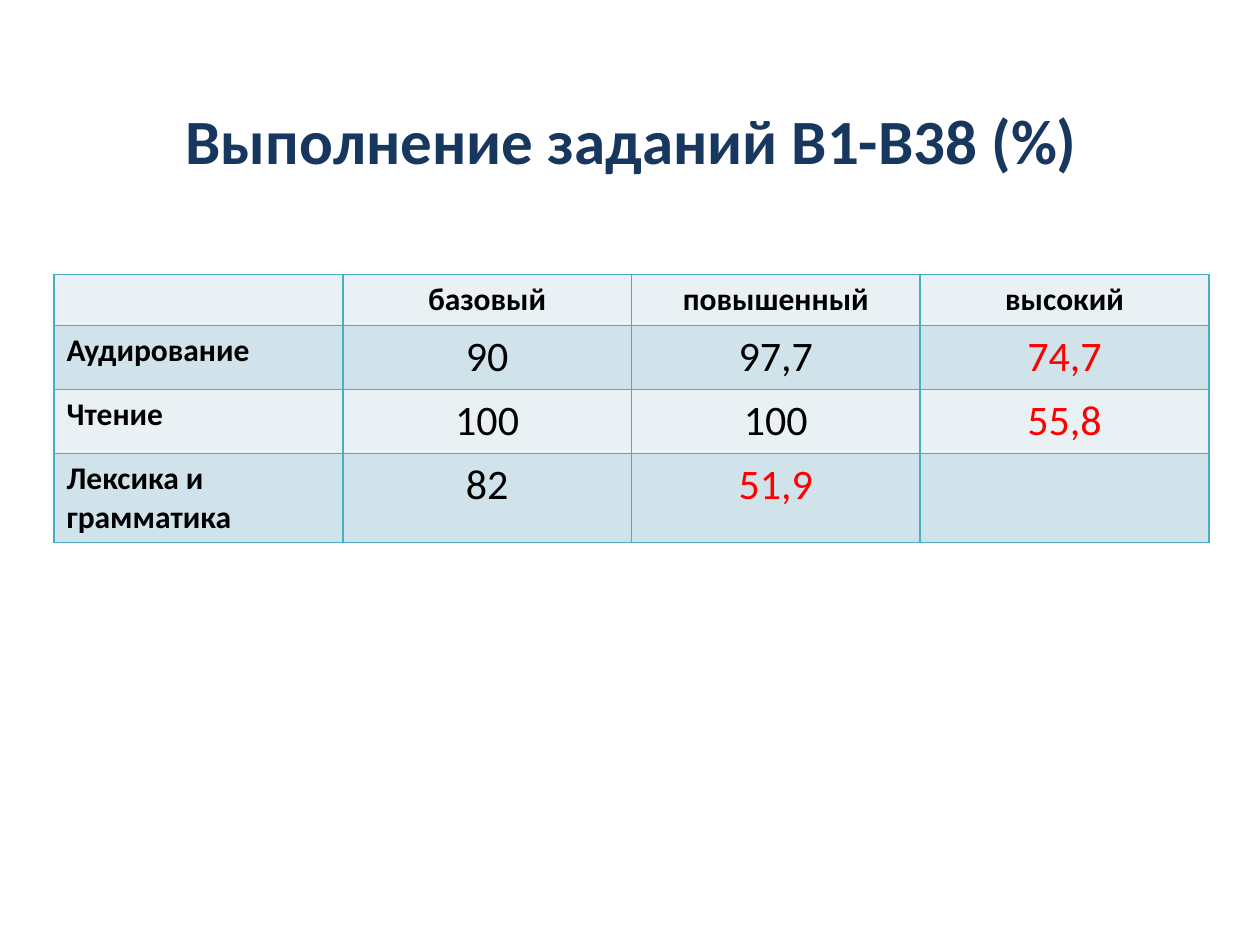
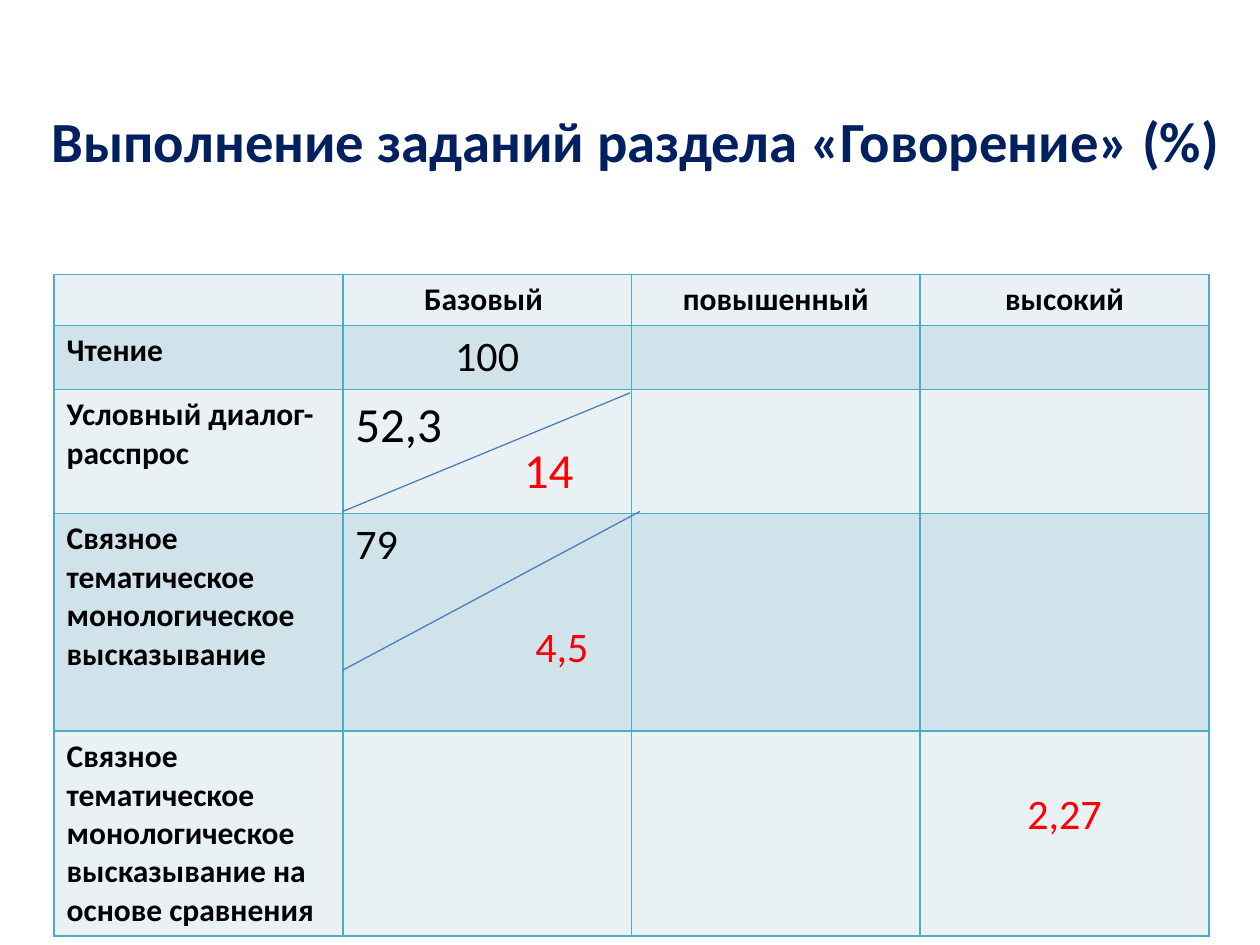
from dataclasses import dataclass

from lxml.etree import SubElement
from pptx import Presentation
from pptx.dml.color import RGBColor
from pptx.enum.shapes import MSO_CONNECTOR
from pptx.enum.text import MSO_ANCHOR, PP_ALIGN
from pptx.oxml import parse_xml
from pptx.oxml.ns import nsdecls, qn
from pptx.util import Cm, Pt

FONT = "Calibri"
COLORS = {
    "title": "17375E",
    "speaking_title": "002060",
    "text": "000000",
    "low": "FF0000",
    "border": "4BACC6",
    "band_light": "E9F1F5",
    "band_dark": "D0E3EA",
    "diagonal": "4B7EBC",
}
BANDS = ("band_light", "band_dark")


@dataclass
class Text:
    text: str
    size: float = 24
    color: str = "text"
    bold: bool = False
    align: PP_ALIGN = PP_ALIGN.CENTER
    indent: float = 0  # cm
    before: float = 0  # pt
    top: float = 0.13  # cm, top margin of the cell


def low(text, **options):
    return Text(text, color="low", **options)


def left(text, **options):
    return Text(text, align=PP_ALIGN.LEFT, **options)


# Each row: height in cm, label, then one list of paragraphs per level.
SLIDES = [
    {
        "title": Text("Выполнение заданий В1-В38 (%)", 36, "title", True),
        "title_box": (1.3, 22.86),
        "levels": ["базовый", "повышенный", "высокий"],
        "rows": [
            (1.29, "Аудирование", [Text("90")], [Text("97,7")], [low("74,7")]),
            (1.29, "Чтение", [Text("100")], [Text("100")], [low("55,8")]),
            (1.8, "Лексика и грамматика", [Text("82")], [low("51,9")], []),
        ],
        "diagonals": [],
        "notes": [],
    },
    {
        "title": Text("Выполнение заданий раздела «Говорение» (%)", 32.4,
                      "speaking_title", True),
        "title_box": (0.71, 24.21),
        "levels": ["Базовый ", "повышенный", "высокий"],
        "rows": [
            (1.29, "Чтение", [Text("100")], [], []),
            (2.5, "Условный диалог-расспрос", [left("52,3", size=28)], [], []),
            (4.39, "Связное тематическое монологическое высказывание",
             [left("79"), low("4,5", align=PP_ALIGN.LEFT, indent=3.63, before=29.3)],
             [], []),
            (4.13, "Связное тематическое монологическое высказывание "
                   "на основе сравнения", [], [], [low("2,27", top=1.17)]),
        ],
        "diagonals": [(6.91, 10.31, 12.7, 7.92), (6.91, 13.51, 12.9, 10.31)],
        "notes": [(low("14", size=28, align=PP_ALIGN.LEFT), (10.31, 8.74, 2.01, 1.45))],
    },
]

TITLE_TOP, TITLE_HEIGHT = 1.73, 2.16
TABLE_LEFT, TABLE_TOP, COLUMN_WIDTH, HEADER_HEIGHT = 1.09, 5.53, 5.82, 1.03


def rgb(name):
    return RGBColor.from_string(COLORS[name])


def write(tf, items):
    for i, item in enumerate(items):
        p = tf.add_paragraph() if i else tf.paragraphs[0]
        p.alignment = item.align
        if item.before:
            p.space_before = Pt(item.before)
        if item.indent:
            p._p.get_or_add_pPr().set("marL", str(Cm(item.indent)))
        r = p.add_run()
        r.text = item.text
        r.font.name = FONT
        r.font.size = Pt(item.size)
        r.font.bold = item.bold
        r.font.color.rgb = rgb(item.color)


def add_text(s, item, box, anchor=MSO_ANCHOR.TOP):
    tf = s.shapes.add_textbox(*map(Cm, box)).text_frame
    tf.word_wrap = True
    tf.vertical_anchor = anchor
    write(tf, [item])


def add_borders(cell):
    tcPr = cell._tc.get_or_add_tcPr()
    for i, side in enumerate("LRTB"):
        tcPr.insert(i, parse_xml(
            f'<a:ln{side} {nsdecls("a")} w="{Pt(1)}"><a:solidFill>'
            f'<a:srgbClr val="{COLORS["border"]}"/></a:solidFill></a:ln{side}>'))


def add_results(s, levels, rows):
    header = [[]] + [[Text(level, 18, bold=True)] for level in levels]
    grid = [header] + [[[left(label, size=18, bold=True)], *values]
                       for _, label, *values in rows]
    heights = [HEADER_HEIGHT] + [row[0] for row in rows]
    n = len(header)
    table = s.shapes.add_table(
        len(grid), n, Cm(TABLE_LEFT), Cm(TABLE_TOP),
        Cm(n * COLUMN_WIDTH), Cm(sum(heights))).table
    table.first_row = table.horz_banding = False
    for column in table.columns:
        column.width = Cm(COLUMN_WIDTH)
    for i, (height, row) in enumerate(zip(heights, grid)):
        table.rows[i].height = Cm(height)
        for j, items in enumerate(row):
            cell = table.cell(i, j)
            cell.fill.solid()
            cell.fill.fore_color.rgb = rgb(BANDS[i % 2])
            add_borders(cell)
            if items:
                cell.margin_top = Cm(items[0].top)
                write(cell.text_frame, items)


def add_diagonal(s, ends):
    line = s.shapes.add_connector(MSO_CONNECTOR.STRAIGHT, *map(Cm, ends))
    line.line.color.rgb = rgb("diagonal")
    line.line.width = Pt(0.75)
    SubElement(line._element.spPr, qn("a:effectLst"))


def main():
    prs = Presentation()
    prs.slide_width, prs.slide_height = Cm(25.4), Cm(19.05)
    for content in SLIDES:
        s = prs.slides.add_slide(prs.slide_layouts[6])
        x, width = content["title_box"]
        add_text(s, content["title"], (x, TITLE_TOP, width, TITLE_HEIGHT),
                 MSO_ANCHOR.MIDDLE)
        add_results(s, content["levels"], content["rows"])
        for ends in content["diagonals"]:
            add_diagonal(s, ends)
        for note, box in content["notes"]:
            add_text(s, note, box)
    prs.save("out.pptx")


if __name__ == "__main__":
    main()
